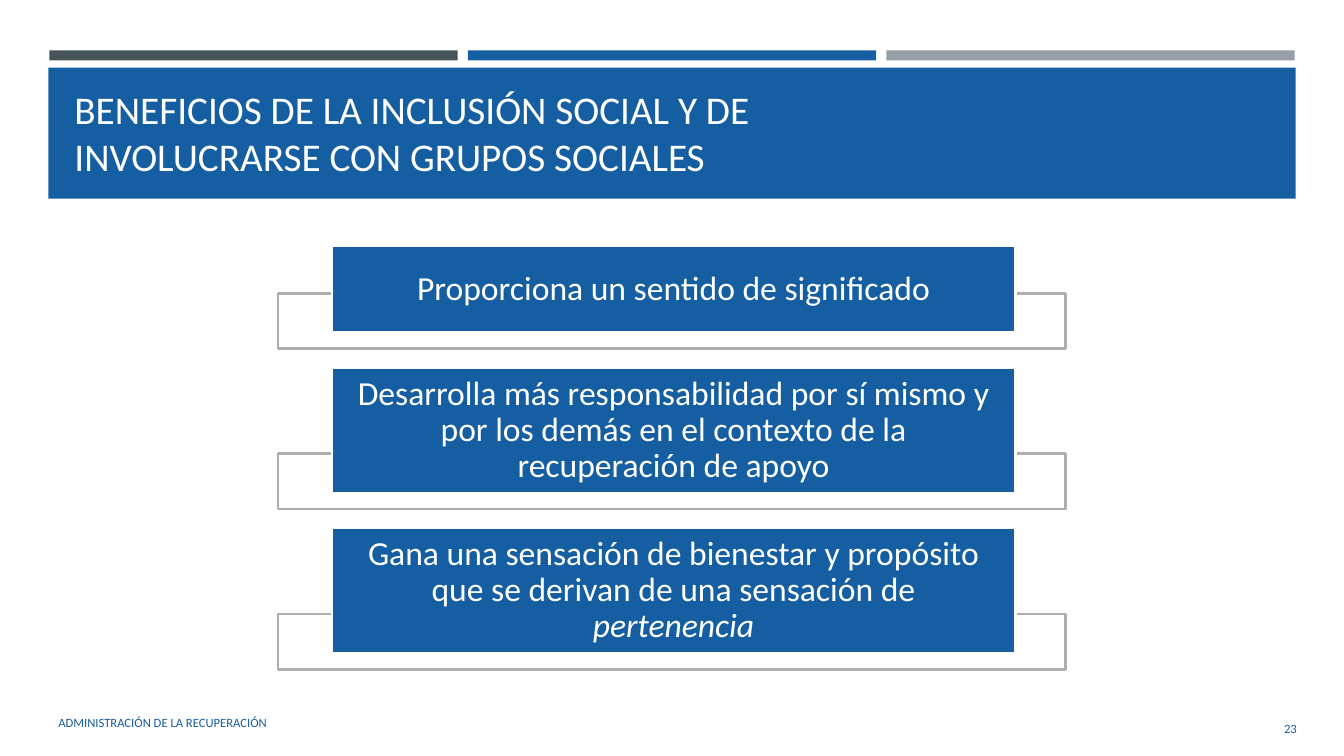
from dataclasses import dataclass

from pptx import Presentation
from pptx import util as u
from pptx.dml.color import RGBColor
from pptx.enum import shapes, text

FONT = "Calibri"
BLUE = "155EA1"
WHITE = "FFFFFF"
FRAME_GRAY = "AEAEAE"
BAR_COLORS = ("465359", BLUE, "969FA7")

BAR_LEFT, BAR_WIDTH, BAR_STEP = 0.49, 4.05, 4.15
BOX_LEFT, BOX_WIDTH, BOX_TOP, BOX_GAP = 3.29, 6.78, 2.44, 0.35
FRAME_LEFT, FRAME_WIDTH, FRAME_HEIGHT, FRAME_OVERLAP = 2.76, 7.81, 0.55, 0.39


@dataclass
class Run:
    words: str
    italic: bool = False


@dataclass
class Benefit:
    height: float
    runs: list[Run]


@dataclass
class Label:
    words: str
    left: float
    top: float
    width: float
    height: float
    size: float
    color: str
    align: text.PP_ALIGN = text.PP_ALIGN.LEFT


BENEFITS = [
    Benefit(0.86, [Run("Proporciona un sentido de significado")]),
    Benefit(1.24, [Run("Desarrolla más responsabilidad por sí mismo y por los demás "
                       "en el contexto de la recuperación de apoyo")]),
    Benefit(1.24, [Run("Gana una sensación de bienestar y propósito que se derivan "
                       "de una sensación de "), Run("pertenencia", italic=True)]),
]

LABELS = [
    Label("BENEFICIOS DE LA INCLUSIÓN SOCIAL Y DE INVOLUCRARSE CON GRUPOS SOCIALES",
          0.64, 0.87, 8.63, 0.89, 28, WHITE),
    Label("ADMINISTRACIÓN DE LA RECUPERACIÓN", 0.48, 6.97, 7.46, 0.4, 9, BLUE),
    Label("23", 11.81, 7.03, 1.15, 0.4, 9, BLUE, text.PP_ALIGN.RIGHT),
]


def rgb(color: str) -> RGBColor:
    return RGBColor.from_string(color)


def add_rectangle(slide, left: float, top: float, width: float, height: float,
                  fill: str, line: str | None = None):
    shape = slide.shapes.add_shape(
        shapes.MSO_SHAPE.RECTANGLE,
        u.Inches(left), u.Inches(top), u.Inches(width), u.Inches(height))
    shape.shadow.inherit = False
    shape.fill.solid()
    shape.fill.fore_color.rgb = rgb(fill)
    if line:
        shape.line.color.rgb = rgb(line)
        shape.line.width = u.Pt(1.75)
    else:
        shape.line.fill.background()
    return shape


def write(shape, runs: list[Run], size: float, color: str, align: text.PP_ALIGN):
    """Fill the shape with one paragraph, centred vertically, and return it."""
    frame = shape.text_frame
    frame.word_wrap = True
    frame.vertical_anchor = text.MSO_ANCHOR.MIDDLE
    paragraph = frame.paragraphs[0]
    paragraph.alignment = align
    for item in runs:
        run = paragraph.add_run()
        run.text = item.words
        run.font.name = FONT
        run.font.size = u.Pt(size)
        run.font.color.rgb = rgb(color)
        if item.italic:
            run.font.italic = True
    return paragraph


def add_label(slide, label: Label) -> None:
    box = slide.shapes.add_textbox(u.Inches(label.left), u.Inches(label.top),
                                   u.Inches(label.width), u.Inches(label.height))
    write(box, [Run(label.words)], label.size, label.color, label.align)


def add_benefit(slide, benefit: Benefit, top: float) -> None:
    add_rectangle(slide, FRAME_LEFT, top + benefit.height - FRAME_OVERLAP,
                  FRAME_WIDTH, FRAME_HEIGHT, WHITE, FRAME_GRAY)
    box = add_rectangle(slide, BOX_LEFT, top, BOX_WIDTH, benefit.height, BLUE, WHITE)
    frame = box.text_frame
    frame.margin_left = frame.margin_right = u.Inches(0.21)
    frame.margin_top = frame.margin_bottom = 0
    paragraph = write(box, benefit.runs, 24, WHITE, text.PP_ALIGN.CENTER)
    paragraph.line_spacing = 0.9


def main() -> None:
    presentation = Presentation()
    presentation.slide_width = u.Inches(13.33)
    presentation.slide_height = u.Inches(7.5)
    slide = presentation.slides.add_slide(presentation.slide_layouts[6])

    for index, color in enumerate(BAR_COLORS):
        add_rectangle(slide, BAR_LEFT + index * BAR_STEP, 0.5, BAR_WIDTH, 0.1, color)
    add_rectangle(slide, 0.48, 0.67, 12.37, 1.3, BLUE)

    for label in LABELS:
        add_label(slide, label)

    top = BOX_TOP
    for benefit in BENEFITS:
        add_benefit(slide, benefit, top)
        top += benefit.height + BOX_GAP

    presentation.save("out.pptx")


if __name__ == "__main__":
    main()
